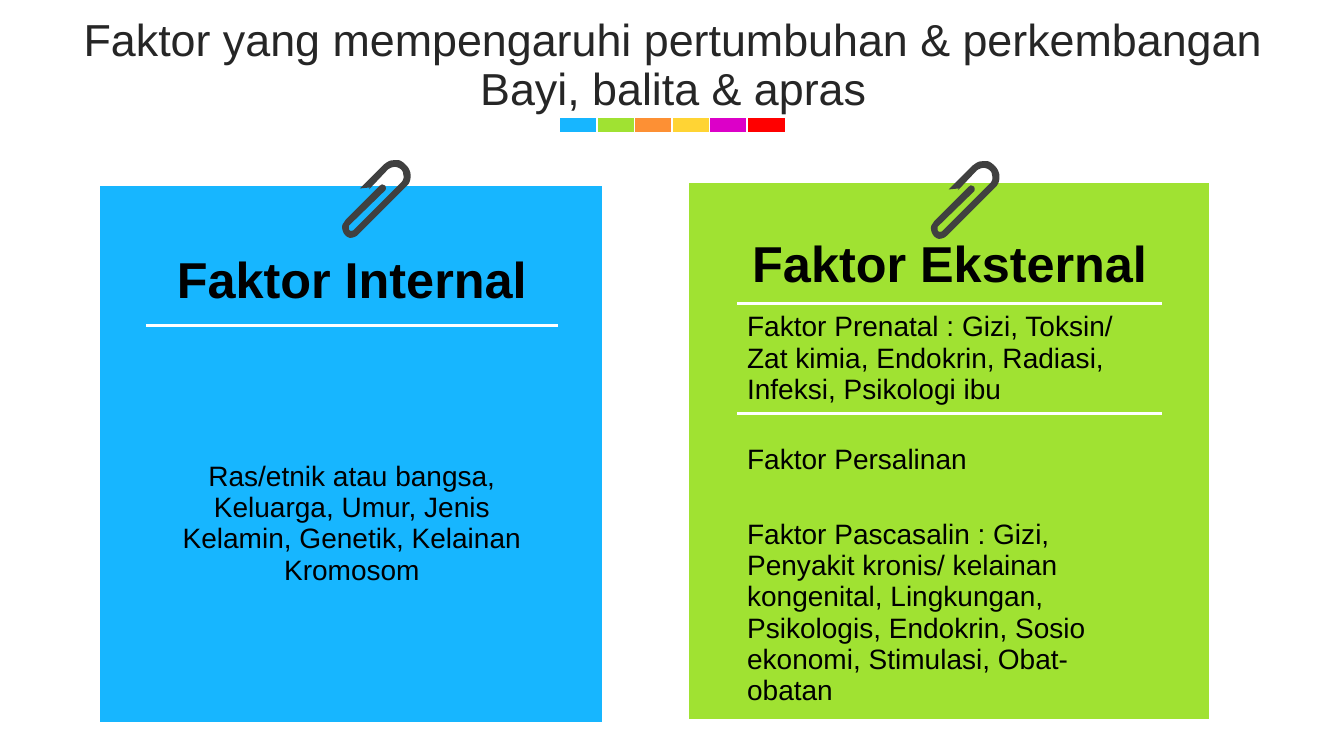
"""Build the slide on internal and external growth factors."""
from lxml import etree
from pptx import Presentation
from pptx.dml.color import RGBColor
from pptx.enum.shapes import MSO_SHAPE
from pptx.enum.text import MSO_ANCHOR, PP_ALIGN
from pptx.oxml.ns import qn
from pptx.util import Inches, Pt

RECTANGLE = MSO_SHAPE.RECTANGLE
MIDDLE = MSO_ANCHOR.MIDDLE
LEFT, CENTER = PP_ALIGN.LEFT, PP_ALIGN.CENTER
NO_TABLE_STYLE = "{2D5ABB26-0587-4C30-8999-92F81FD0307C}"

TITLE = "Faktor yang mempengaruhi pertumbuhan & perkembangan Bayi, balita & apras"
STRIP_COLOURS = ["17B6FF", "A0E232", "FD9034", "FFD434", "DC00C8", "FF0000"]
STRIP = {"left": 5.55, "top": 1.16, "pitch": 0.372, "width": 0.38, "height": 0.16}
CARDS = [
    {
        "left": 0.99, "top": 1.85, "colour": "17B6FF", "margin": 0.2, "align": CENTER,
        "columns": [0.46, 4.08, 0.44],
        "rows": [0.49, 0.89, 0.66, 0.48, 0.92, 1.06, 0.81],
        "heading": "Faktor Internal",
        "body": ["Ras/etnik atau bangsa, Keluarga, Umur, Jenis Kelamin, Genetik, Kelainan Kromosom"],
        "clip": (3.4, 1.59),
    },
    {
        "left": 6.83, "top": 1.82, "colour": "A0E232", "margin": 0.1, "align": LEFT,
        "columns": [0.48, 4.22, 0.46],
        "rows": [0.42, 0.77, 1.09, 0.93, 2.1],
        "heading": "Faktor Eksternal",
        "body": [
            "Faktor Prenatal : Gizi, Toksin/ Zat kimia, Endokrin, Radiasi, Infeksi, Psikologi ibu",
            "Faktor Persalinan",
            "Faktor Pascasalin : Gizi, Penyakit kronis/ kelainan kongenital, Lingkungan, "
            "Psikologis, Endokrin, Sosio ekonomi, Stimulasi, Obat-obatan",
        ],
        "clip": (9.24, 1.6),
    },
]
CLIP_START = (50, 0)
CLIP_SEGMENTS = [
    (52, 0, 54, 0, 56, 0), (59, 1, 61, 3, 63, 5), (65, 7, 66, 9, 67, 12),
    (68, 17, 67, 23, 63, 26), (15, 74), (13, 76, 10, 77, 7, 77),
    (3, 76, 1, 73, 0, 70), (-1, 67, -1, 64, 1, 62), (3, 59), (37, 25),
    (38, 25, 38, 24, 39, 24), (40, 24, 41, 25, 42, 25), (43, 27, 43, 29, 42, 30),
    (6, 65), (6, 66, 6, 67, 6, 68), (6, 69, 7, 70, 8, 70), (9, 70, 10, 70, 11, 69),
    (58, 22), (60, 20, 61, 17, 60, 14), (60, 10, 57, 8, 54, 7), (51, 6, 48, 7, 45, 9),
    (26, 29), (27, 27), (17, 28), (41, 4), (44, 2, 46, 0, 50, 0),
]
CURVE_STEPS = 6


def colour(hex_code):
    return RGBColor.from_string(hex_code)


def paint(shape, hex_code):
    shape.shadow.inherit = False
    shape.fill.solid()
    shape.fill.fore_color.rgb = colour(hex_code)


def write(frame, text, align, hex_code="000000", **font_format):
    para = frame.paragraphs[0]
    para.alignment = align
    span = para.add_run()
    span.text = text
    span.font.color.rgb = colour(hex_code)
    for name, value in {"name": "Arial", "bold": False, **font_format}.items():
        setattr(span.font, name, value)
    return para


def add_title(page):
    box = page.shapes.title
    for name, value in {"left": 0.35, "top": 0.24, "width": 12.66, "height": 0.79}.items():
        setattr(box, name, Inches(value))
    frame = box.text_frame
    frame.word_wrap = True
    frame.vertical_anchor = MIDDLE
    frame.margin_top = Inches(0.1)
    para = write(frame, TITLE, CENTER, "262626", size=Pt(32))
    para.line_spacing = 0.9
    para.space_before = Pt(10)


def add_strip(page):
    for index, hex_code in enumerate(STRIP_COLOURS):
        left = STRIP["left"] + index * STRIP["pitch"]
        block = page.shapes.add_shape(
            RECTANGLE, Inches(left), Inches(STRIP["top"]),
            Inches(STRIP["width"]), Inches(STRIP["height"]))
        paint(block, hex_code)
        block.line.color.rgb = colour("FFFFFF")
        block.line.width = Pt(1)


def add_border(cell, side):
    line = etree.Element(qn(f"a:{side}"), w=str(Pt(2.25)))
    fill = etree.SubElement(line, qn("a:solidFill"))
    etree.SubElement(fill, qn("a:srgbClr"), val="FFFFFF")
    cell._tc.get_or_add_tcPr().insert(0, line)


def add_card(page, card):
    columns, rows = card["columns"], card["rows"]
    table = page.shapes.add_table(
        len(rows), len(columns), Inches(card["left"]), Inches(card["top"]),
        Inches(sum(columns)), Inches(sum(rows))).table
    table.first_row = table.horz_banding = False
    table._tbl.tblPr[0].text = NO_TABLE_STYLE
    for column, width in zip(table.columns, columns):
        column.width = Inches(width)
    for row, height in zip(table.rows, rows):
        row.height = Inches(height)
    for cell in table.iter_cells():
        cell.fill.solid()
        cell.fill.fore_color.rgb = colour(card["colour"])
        cell.vertical_anchor = MIDDLE
        cell.margin_left = cell.margin_right = Inches(card["margin"])
    heading, first_body = table.cell(1, 1), table.cell(2, 1)
    write(heading.text_frame, card["heading"], CENTER, size=Pt(36), bold=True)
    if len(card["body"]) == 1:
        first_body.merge(table.cell(len(rows) - 1, 1))
    for index, text in enumerate(card["body"], start=2):
        write(table.cell(index, 1).text_frame, text, card["align"], size=Pt(20))
    add_border(heading, "lnB")
    add_border(first_body, "lnT")


def clip_points():
    points = [CLIP_START]
    for segment in CLIP_SEGMENTS:
        if len(segment) == 2:
            points.append(segment)
            continue
        controls = [points[-1], segment[:2], segment[2:4], segment[4:]]
        for step in range(1, CURVE_STEPS + 1):
            t = step / CURVE_STEPS
            weights = [(1 - t) ** 3, 3 * t * (1 - t) ** 2, 3 * t * t * (1 - t), t ** 3]
            points.append(tuple(
                sum(weight * control[axis] for weight, control in zip(weights, controls))
                for axis in (0, 1)))
    return points


def add_clip(page, left, top):
    start, *others = [(Inches(left + x / 100), Inches(top + y / 100)) for x, y in clip_points()]
    builder = page.shapes.build_freeform(*start)
    builder.add_line_segments(others, close=True)
    clip = builder.convert_to_shape()
    paint(clip, "404040")
    clip.line.fill.background()


def main():
    deck = Presentation()
    deck.slide_width, deck.slide_height = Inches(13.33), Inches(7.5)
    page = deck.slides.add_slide(deck.slide_layouts[5])
    add_title(page)
    add_strip(page)
    for card in CARDS:
        add_card(page, card)
        add_clip(page, *card["clip"])
    deck.save("out.pptx")


if __name__ == "__main__":
    main()
